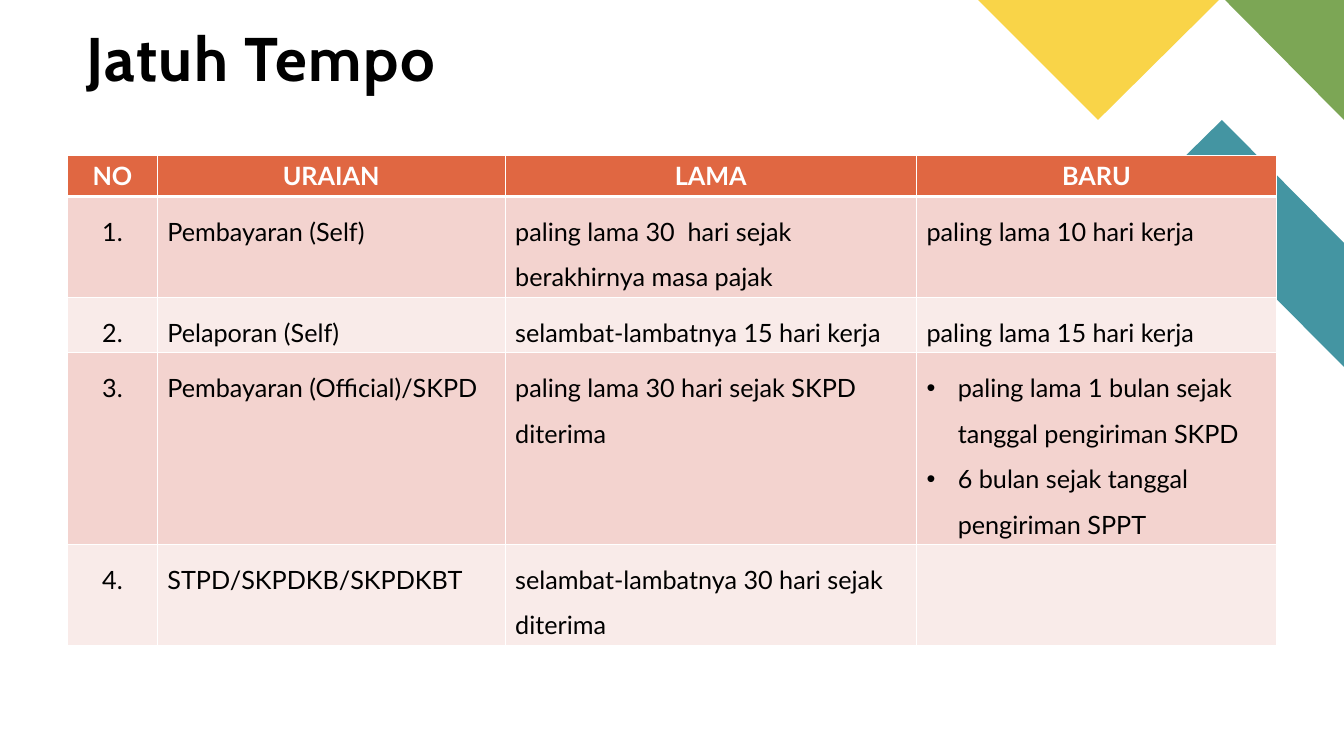
from lxml.etree import SubElement
from pptx import Presentation
from pptx.dml.color import RGBColor
from pptx.enum.text import MSO_ANCHOR, MSO_AUTO_SIZE, PP_ALIGN
from pptx.oxml import parse_xml
from pptx.oxml.ns import nsdecls, qn
from pptx.util import Inches, Pt

WIDTH, HEIGHT = 13.33, 7.5


def color(hex_string):
    return RGBColor.from_string(hex_string)


def style_text(paragraph, font_name, size, hex_string, bold):
    for run in paragraph.runs:
        run.font.name = font_name
        run.font.size = Pt(size)
        run.font.bold = bold
        run.font.color.rgb = color(hex_string)


deck = Presentation()
deck.slide_width, deck.slide_height = Inches(WIDTH), Inches(HEIGHT)
slide = deck.slides.add_slide(deck.slide_layouts[5])

corner_pieces = [
    ("4495A2", [(WIDTH, 3.64), (WIDTH, 2.41), (12.12, 1.19), (11.5, 1.8)]),
    ("7CA655", [(WIDTH, 1.19), (WIDTH, 0), (12.15, 0)]),
    ("F9D448", [(9.7, 0), (10.89, 1.19), (12.09, 0)]),
]
for fill, corners in corner_pieces:
    points = [(Inches(x), Inches(y)) for x, y in corners]
    outline = slide.shapes.build_freeform(*points[0])
    outline.add_line_segments(points[1:], close=True)
    piece = outline.convert_to_shape()
    piece.shadow.inherit = False
    piece.fill.solid()
    piece.fill.fore_color.rgb = color(fill)
    piece.line.fill.background()

title = slide.shapes.title
title.left, title.top = Inches(0.86), Inches(0.27)
title.width, title.height = Inches(5.4), Inches(0.67)
heading = title.text_frame
heading.text = "Jatuh Tempo"
heading.auto_size = MSO_AUTO_SIZE.NONE
heading.vertical_anchor = MSO_ANCHOR.BOTTOM
heading.margin_left = heading.margin_right = 0
heading.margin_top = heading.margin_bottom = 0
heading.paragraphs[0].alignment = PP_ALIGN.LEFT
heading.paragraphs[0].line_spacing = 0.9
style_text(heading.paragraphs[0], "Cabin", 44, "000000", True)
heading.paragraphs[0].runs[0].font._element.set("spc", "100")

due_dates = [
    ["NO", "URAIAN", "LAMA", "BARU"],
    ["1.", "Pembayaran (Self)", "paling lama 30  hari sejak berakhirnya masa pajak",
     "paling lama 10 hari kerja"],
    ["2.", "Pelaporan (Self)", "selambat-lambatnya 15 hari kerja",
     "paling lama 15 hari kerja"],
    ["3.", "Pembayaran (Official)/SKPD", "paling lama 30 hari sejak SKPD diterima",
     "paling lama 1 bulan sejak tanggal pengiriman SKPD\n"
     "6 bulan sejak tanggal pengiriman SPPT"],
    ["4.", "STPD/SKPDKB/SKPDKBT", "selambat-lambatnya 30 hari sejak diterima", ""],
]
column_widths = [0.89, 3.45, 4.08, 3.57]
row_heights = [0.41, 1, 0.54, 1.9, 0.99]
table = slide.shapes.add_table(
    len(row_heights), len(column_widths), Inches(0.67), Inches(1.54),
    Inches(sum(column_widths)), Inches(sum(row_heights))).table
for column, width in zip(table.columns, column_widths):
    column.width = Inches(width)
for row, height in zip(table.rows, row_heights):
    row.height = Inches(height)

for r, entries in enumerate(due_dates):
    is_header = r == 0
    band = "E06742" if is_header else ("F9EBE9", "F3D3CF")[r % 2]
    for c, entry in enumerate(entries):
        cell = table.cell(r, c)
        cell.fill.solid()
        cell.fill.fore_color.rgb = color(band)
        properties = cell._tc.get_or_add_tcPr()
        for position, side in enumerate(["lnL", "lnR", "lnT", "lnB"]):
            is_thick = (r, side) in [(0, "lnB"), (1, "lnT")]
            properties.insert(position, parse_xml(
                f'<a:{side} {nsdecls("a")} w="{Pt(3 if is_thick else 1)}">'
                f'<a:solidFill><a:srgbClr val="FFFFFF"/></a:solidFill></a:{side}>'))
        cell.text_frame.text = entry
        paragraphs = cell.text_frame.paragraphs
        for paragraph in paragraphs:
            centered = is_header or c == 0
            paragraph.alignment = PP_ALIGN.CENTER if centered else PP_ALIGN.LEFT
            paragraph.line_spacing = 1 if is_header else 1.5
            style_text(paragraph, "Lato", 18, "FFFFFF" if is_header else "000000", is_header)
            if len(paragraphs) > 1:
                layout = paragraph._p.get_or_add_pPr()
                layout.set("marL", str(Inches(0.31)))
                layout.set("indent", str(-Inches(0.31)))
                SubElement(layout, qn("a:buFont"), typeface="Arial")
                SubElement(layout, qn("a:buChar"), char="•")

deck.save("out.pptx")
